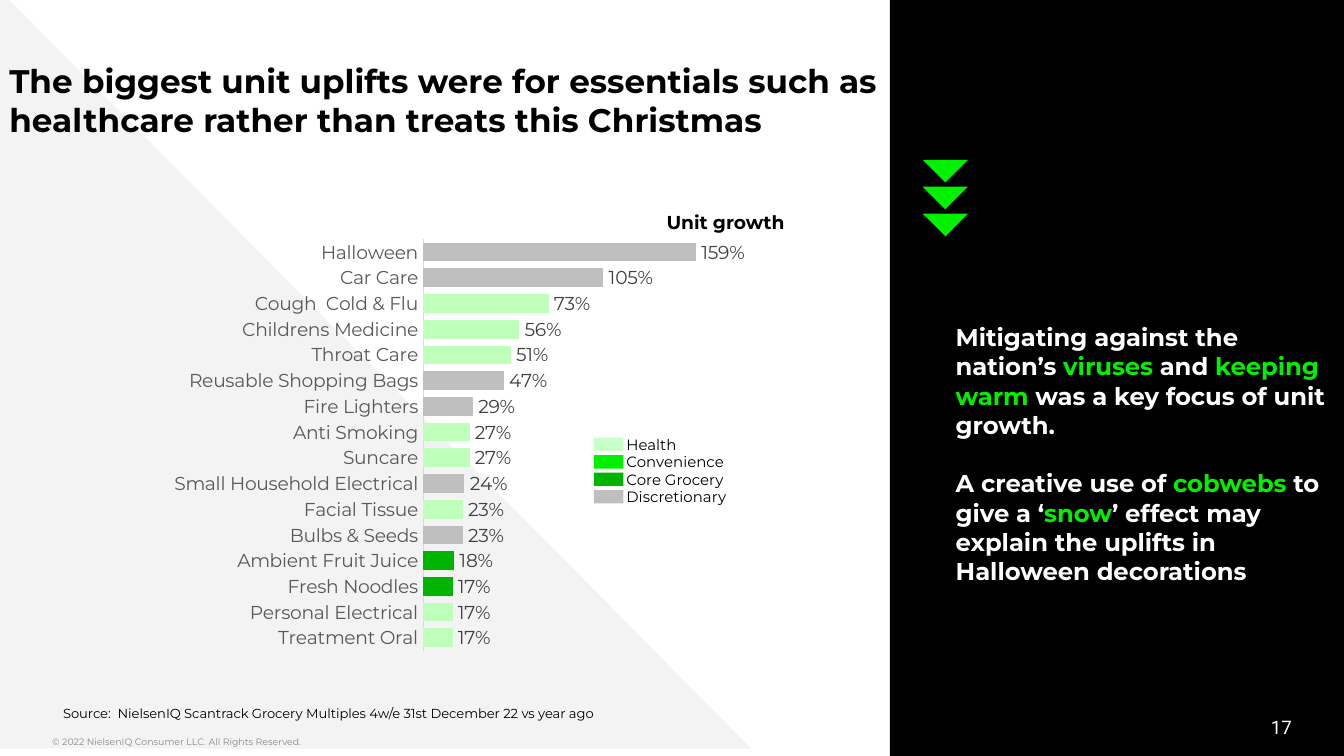
from typing import NamedTuple

from lxml import etree
from pptx import Presentation
from pptx import util as u
from pptx.chart.data import CategoryChartData
from pptx.dml.color import RGBColor
from pptx.enum import chart as ch
from pptx.enum import shapes, text
from pptx.oxml import parse_xml
from pptx.oxml.ns import nsdecls, qn

BLACK, WHITE, GREEN = "000000", "FFFFFF", "00F000"
PALE_GREEN, DARK_GREEN, GREY = "BDFFBB", "00B400", "BFBFBF"


class Box(NamedTuple):
    left: float
    top: float
    width: float
    height: float


class Run(NamedTuple):
    words: str
    color: str = BLACK


class Insets(NamedTuple):
    left: float = 0
    top: float = 3.6
    right: float = 0
    bottom: float = 3.6


class Product(NamedTuple):
    name: str
    growth: float
    color: str


class LegendEntry(NamedTuple):
    name: str
    color: str


PRODUCTS = [
    Product("Halloween", 1.59, GREY),
    Product("Car Care", 1.05, GREY),
    Product("Cough  Cold & Flu", 0.73, PALE_GREEN),
    Product("Childrens Medicine", 0.56, PALE_GREEN),
    Product("Throat Care", 0.51, PALE_GREEN),
    Product("Reusable Shopping Bags", 0.47, GREY),
    Product("Fire Lighters", 0.29, GREY),
    Product("Anti Smoking", 0.27, PALE_GREEN),
    Product("Suncare", 0.27, PALE_GREEN),
    Product("Small Household Electrical", 0.24, GREY),
    Product("Facial Tissue", 0.23, PALE_GREEN),
    Product("Bulbs & Seeds", 0.23, GREY),
    Product("Ambient Fruit Juice", 0.18, DARK_GREEN),
    Product("Fresh Noodles", 0.17, DARK_GREEN),
    Product("Personal Electrical", 0.17, PALE_GREEN),
    Product("Treatment Oral", 0.17, PALE_GREEN),
]
LEGEND = [
    LegendEntry("Health", "C9FFC9"),
    LegendEntry("Convenience", GREEN),
    LegendEntry("Core Grocery", DARK_GREEN),
    LegendEntry("Discretionary", GREY),
]
INSIGHTS = [
    [
        Run("Mitigating against the nation’s ", WHITE),
        Run("viruses", GREEN),
        Run(" and ", WHITE),
        Run("keeping warm", GREEN),
        Run(" was a key focus of unit growth.", WHITE),
    ],
    [
        Run("A creative use of ", WHITE),
        Run("cobwebs ", GREEN),
        Run("to give a ‘", WHITE),
        Run("snow", GREEN),
        Run("’ effect may explain the uplifts in Halloween decorations", WHITE),
    ],
]


def rgb(color: str) -> RGBColor:
    return RGBColor.from_string(color)


def points(box: Box) -> list[u.Length]:
    return [u.Pt(length) for length in box]


def style(font, size: float, color: str, bold: bool = False, face: str = "Montserrat") -> None:
    font.name, font.size, font.bold = face, u.Pt(size), bold
    font.color.rgb = rgb(color)


def add_block(slide, preset, box: Box, color: str, rotation: float = 0) -> None:
    """Add a filled shape with no outline."""
    block = slide.shapes.add_shape(preset, *points(box))
    block.shadow.inherit = False
    block.fill.solid()
    block.fill.fore_color.rgb = rgb(color)
    block.line.fill.background()
    block.rotation = rotation


def add_text(slide, box: Box, paragraphs: list[list[Run]], size: float, *, bold: bool = False,
             face: str = "Montserrat", insets: Insets = Insets(), gap: float = 0,
             align=text.PP_ALIGN.LEFT, anchor=text.MSO_ANCHOR.TOP, wrap: bool = True) -> None:
    frame = slide.shapes.add_textbox(*points(box)).text_frame
    frame.word_wrap = wrap
    frame.vertical_anchor = anchor
    frame.margin_left, frame.margin_top, frame.margin_right, frame.margin_bottom = (
        u.Pt(inset) for inset in insets)
    for index, runs in enumerate(paragraphs):
        paragraph = frame.add_paragraph() if index else frame.paragraphs[0]
        paragraph.alignment = align
        if index:
            paragraph.space_before = u.Pt(gap)
        for piece in runs:
            run = paragraph.add_run()
            run.text = piece.words
            style(run.font, size, piece.color, bold, face)


def place_plot(chart, x: float, y: float, w: float, h: float) -> None:
    """Fix the inner plot area as fractions of the chart."""
    plot_area = chart.element.find(".//" + qn("c:plotArea"))
    for old in plot_area.findall(qn("c:layout")):
        plot_area.remove(old)
    layout = parse_xml(f"<c:layout {nsdecls('c')}/>")
    manual = etree.SubElement(layout, qn("c:manualLayout"))
    settings = {"layoutTarget": "inner", "xMode": "edge", "yMode": "edge",
                "x": x, "y": y, "w": w, "h": h}
    for tag, value in settings.items():
        etree.SubElement(manual, qn(f"c:{tag}")).set("val", str(value))
    plot_area.insert(0, layout)


def add_growth_chart(slide, box: Box, products: list[Product]) -> None:
    data = CategoryChartData(number_format="0%")
    data.categories = [product.name for product in products]
    data.add_series("Series 1", [product.growth for product in products])
    chart = slide.shapes.add_chart(ch.XL_CHART_TYPE.BAR_CLUSTERED, *points(box), data).chart
    chart.has_legend = chart.has_title = False
    style(chart.font, 10, BLACK, face="Arial")
    place_plot(chart, 0.442, 0.033, 0.503, 0.909)

    names = chart.category_axis
    names.reverse_order = True
    names.has_major_gridlines = False
    names.major_tick_mark = names.minor_tick_mark = ch.XL_TICK_MARK.NONE
    names.format.line.color.rgb = rgb("D9D9D9")
    names.format.line.width = u.Pt(0.75)
    style(names.tick_labels.font, 10, "595959")

    growth = chart.value_axis
    growth.visible = growth.has_major_gridlines = False
    growth.minimum_scale, growth.maximum_scale = 0, 1.8

    plot = chart.plots[0]
    plot.gap_width, plot.vary_by_categories = 37, False
    bars = plot.series[0]
    bars.format.fill.solid()
    bars.format.fill.fore_color.rgb = rgb(GREEN)
    for index, product in enumerate(products):
        fill = bars.points[index].format.fill
        fill.solid()
        fill.fore_color.rgb = rgb(product.color)
    labels = bars.data_labels
    labels.show_value = True
    labels.number_format, labels.number_format_is_linked = "0%", False
    labels.position = ch.XL_LABEL_POSITION.OUTSIDE_END
    style(labels.font, 10, "404040")


def add_legend(slide, entries: list[LegendEntry]) -> None:
    for index, entry in enumerate(entries):
        drop = 9.36 * index
        add_block(slide, shapes.MSO_SHAPE.RECTANGLE, Box(318.2, 234.5 + drop, 15.8, 7.2), entry.color)
        add_text(slide, Box(328.5, 229.7 + drop, 91.4, 17.3), [[Run(entry.name)]], 8,
                 insets=Insets(7.2, 3.6, 7.2, 3.6))


def main() -> None:
    deck = Presentation()
    deck.slide_width, deck.slide_height = u.Pt(720), u.Pt(405)
    slide = deck.slides.add_slide(deck.slide_layouts[6])

    add_block(slide, shapes.MSO_SHAPE.RECTANGLE, Box(476.8, -1.4, 247, 407.5), BLACK)
    add_block(slide, shapes.MSO_SHAPE.RIGHT_TRIANGLE, Box(0, -5, 402.5, 406), "F3F3F3")
    add_text(slide, Box(28, 391, 399, 14.4),
             [[Run("© 2022 NielsenIQ Consumer LLC. All Rights Reserved.", "888888")]], 5)
    add_text(slide, Box(530, 378.7, 162, 21.6), [[Run("17", WHITE)]], 10, face="Roboto",
             align=text.PP_ALIGN.RIGHT, anchor=text.MSO_ANCHOR.MIDDLE)

    add_text(slide, Box(512, 137.5, 201, 201), INSIGHTS, 13, bold=True,
             insets=Insets(top=35.3), gap=15.8)
    for row in range(3):
        add_block(slide, shapes.MSO_SHAPE.RIGHT_TRIANGLE,
                  Box(497.8, 77 + 14.4 * row, 17.2, 17.2), GREEN, rotation=315)

    add_text(slide, Box(5, 25.2, 471.6, 52.6),
             [[Run("The biggest unit uplifts were for essentials such as "
                   "healthcare rather than treats this Christmas")]],
             17.5, bold=True, insets=Insets(0, 7.2, 0, 7.2))
    add_growth_chart(slide, Box(81.4, 120.2, 329, 242.6), PRODUCTS)
    add_text(slide, Box(22.3, 373.7, 642.2, 10.8),
             [[Run("Source:  NielsenIQ Scantrack Grocery Multiples 4w/e 31st December 22 vs year ago")]],
             7, insets=Insets(11.5, 7.2, 0, 7.2))
    add_text(slide, Box(350, 109.4, 78.5, 19.4), [[Run("Unit growth")]], 10, bold=True,
             insets=Insets(7.2, 3.6, 7.2, 3.6), wrap=False)
    add_legend(slide, LEGEND)
    deck.save("out.pptx")


if __name__ == "__main__":
    main()
